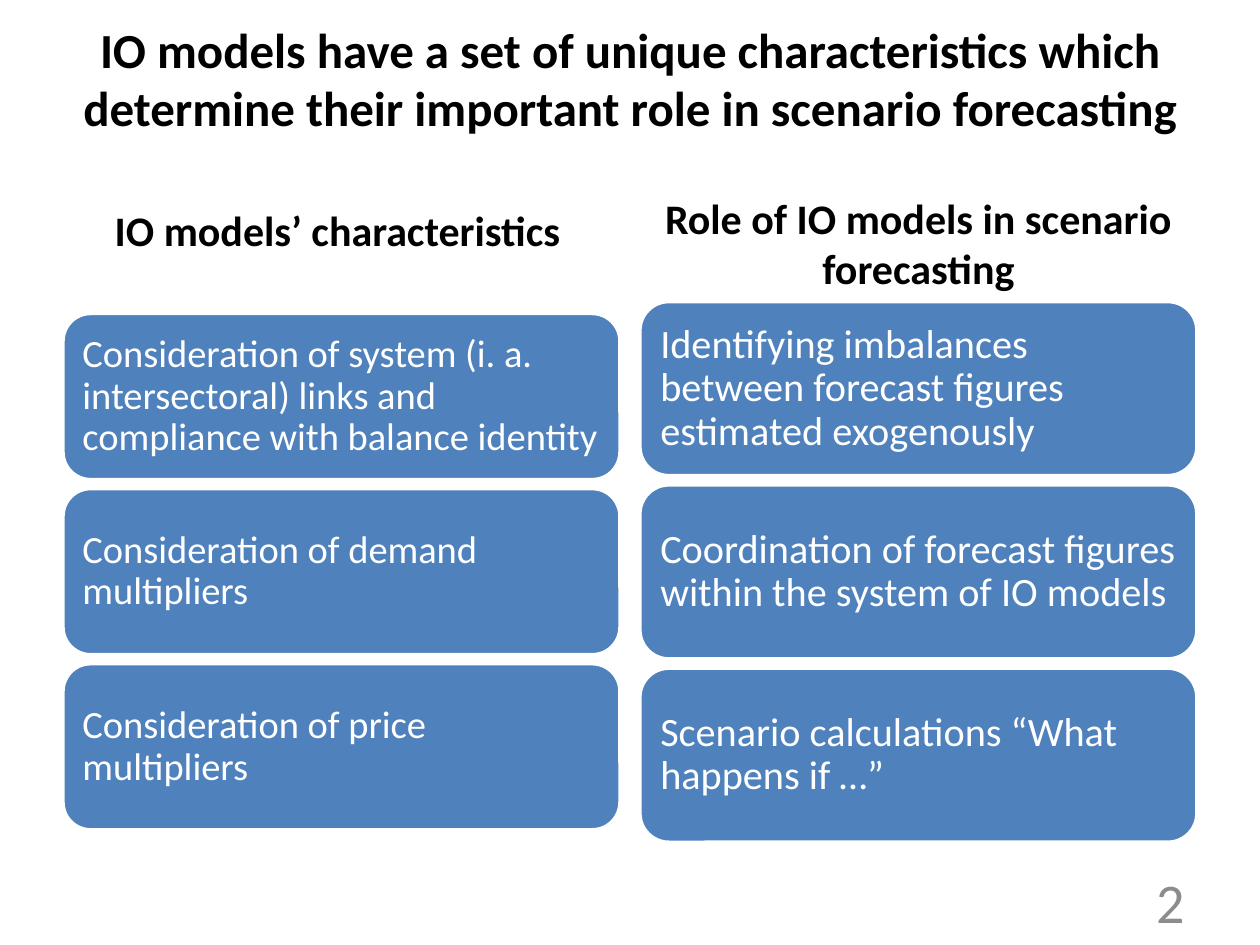
from dataclasses import dataclass

from pptx import Presentation
from pptx.dml.color import RGBColor
from pptx.enum import shapes, text
from pptx.util import Cm, Pt


@dataclass(frozen=True)
class Theme:
    font: str = "Calibri"
    ink: str = "000000"
    card: str = "4F81BD"
    paper: str = "FFFFFF"
    muted: str = "8C8C8C"
    title_size: float = 28
    heading_size: float = 24
    number_size: float = 32


THEME = Theme()
COLUMN_WIDTH = 11.23
HEADING_HEIGHT = 2.08

# Heading box, card box (left, top, width, height in cm), card height, card text size
COLUMNS = [
    {
        "heading": "IO models’ characteristics",
        "heading_box": (1.19, 3.18, COLUMN_WIDTH, HEADING_HEIGHT),
        "cards": [
            "Consideration of system (i. a. intersectoral) links and compliance with balance identity",
            "Consideration of demand multipliers",
            "Consideration of price multipliers",
        ],
        "cards_box": (1.27, 6.32, COLUMN_WIDTH, 10.41),
        "card_height": 3.35,
        "size": 22,
        "inset": 0.23,
    },
    {
        "heading": "Role of IO models in scenario forecasting",
        "heading_box": (12.9, 3.96, COLUMN_WIDTH, HEADING_HEIGHT),
        "cards": [
            "Identifying imbalances between forecast figures estimated exogenously",
            "Coordination of forecast figures within the system of IO models",
            "Scenario calculations “What happens if …”",
        ],
        "cards_box": (12.9, 6.08, COLUMN_WIDTH, 10.9),
        "card_height": 3.51,
        "size": 23,
        "inset": 0.24,
    },
]


def write(shape, wording, size, color, align, anchor, bold=False):
    frame = shape.text_frame
    frame.word_wrap = True
    frame.vertical_anchor = anchor
    frame.text = wording
    paragraph = frame.paragraphs[0]
    paragraph.alignment = align
    for run in paragraph.runs:
        run.font.name = THEME.font
        run.font.size = Pt(size)
        run.font.bold = bold
        run.font.color.rgb = RGBColor.from_string(color)
    return frame


def add_label(slide, box, *style, **options):
    label = slide.shapes.add_textbox(*map(Cm, box))
    return write(label, *style, **options)


def add_title(slide, box):
    frame = add_label(
        slide, box,
        "IO models have a set of unique characteristics which "
        "determine their important role in scenario forecasting",
        THEME.title_size, THEME.ink, text.PP_ALIGN.CENTER,
        text.MSO_ANCHOR.MIDDLE, bold=True)
    frame.margin_bottom = Cm(1.68)  # lifts the title clear of the headings


def add_cards(slide, box, wordings, card_height, size, inset):
    """Stack equal cards so that they fill the box from top to bottom."""
    left, top, width, height = box
    pitch = (height - card_height) / (len(wordings) - 1)
    for index, wording in enumerate(wordings):
        card = slide.shapes.add_shape(
            shapes.MSO_SHAPE.ROUNDED_RECTANGLE,
            Cm(left), Cm(top + index * pitch), Cm(width), Cm(card_height))
        card.shadow.inherit = False
        card.fill.solid()
        card.fill.fore_color.rgb = RGBColor.from_string(THEME.card)
        card.line.color.rgb = RGBColor.from_string(THEME.paper)
        card.line.width = Pt(2)
        frame = write(card, wording, size, THEME.paper,
                      text.PP_ALIGN.LEFT, text.MSO_ANCHOR.MIDDLE)
        frame.margin_left = frame.margin_right = Cm(inset)
        frame.margin_top = frame.margin_bottom = Cm(inset)
        frame.paragraphs[0].line_spacing = 0.9


def add_column(slide, column):
    add_label(slide, column["heading_box"], column["heading"],
              THEME.heading_size, THEME.ink, text.PP_ALIGN.CENTER,
              text.MSO_ANCHOR.BOTTOM, bold=True)
    add_cards(slide, column["cards_box"], column["cards"],
              column["card_height"], column["size"], column["inset"])


def add_page_number(slide, box):
    add_label(slide, box, "2", THEME.number_size, THEME.muted,
              text.PP_ALIGN.RIGHT, text.MSO_ANCHOR.MIDDLE)


def main():
    presentation = Presentation()
    presentation.slide_width = Cm(25.4)
    presentation.slide_height = Cm(19.05)
    slide = presentation.slides.add_slide(presentation.slide_layouts[6])
    add_title(slide, (1.27, 0.76, 22.86, 3.18))
    for column in COLUMNS:
        add_column(slide, column)
    add_page_number(slide, (18.2, 17.66, 5.93, 1.01))
    presentation.save("out.pptx")


if __name__ == "__main__":
    main()
